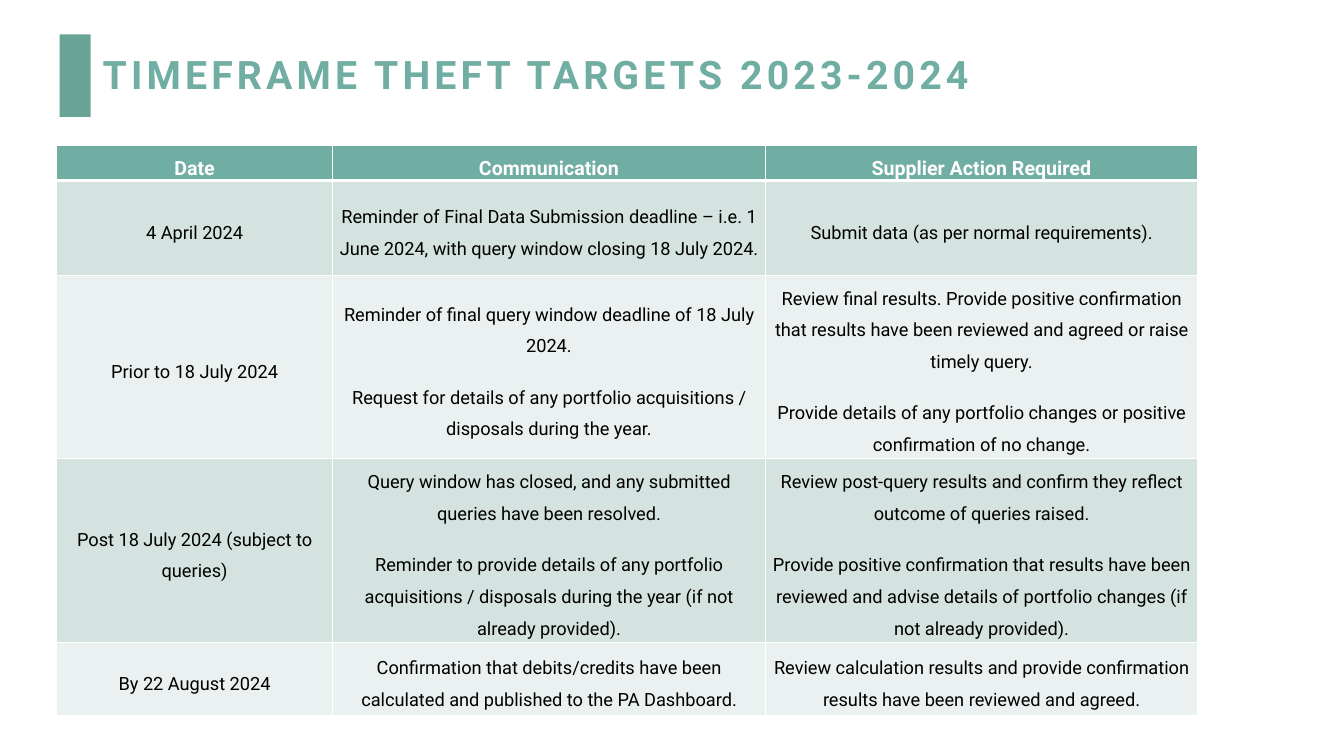
import lxml.etree
import pptx
import pptx.dml.color
import pptx.enum.shapes
import pptx.enum.text
import pptx.oxml.ns
import pptx.util
from pptx.util import Inches

COLORS = {
    "accent": "68A495",
    "teal": "70ADA3",
    "band_dark": "D5E3E0",
    "band_light": "EBF1F0",
    "white": "FFFFFF",
    "black": "000000",
}


def color(name):
    return pptx.dml.color.RGBColor.from_string(COLORS[name])


def write_text(frame, text, *, size, ink, bold=False, align=None,
               line_spacing=1.0, before=0, after=0, tracking=0):
    """Write each line of text as one formatted paragraph."""
    frame.word_wrap = True
    for index, line in enumerate(text.split("\n")):
        paragraph = frame.add_paragraph() if index else frame.paragraphs[0]
        paragraph.alignment = align
        paragraph.line_spacing = line_spacing
        paragraph.space_before = pptx.util.Pt(before if index else 0)
        paragraph.space_after = pptx.util.Pt(after)
        run = paragraph.add_run()
        run.text = line
        run.font.name = "Roboto"
        run.font.size = pptx.util.Pt(size)
        run.font.bold = bold
        run.font.color.rgb = color(ink)
        if tracking:
            run._r.get_or_add_rPr().set("spc", str(tracking * 100))


presentation = pptx.Presentation()
presentation.slide_width = Inches(13.33)
presentation.slide_height = Inches(7.5)
slide = presentation.slides.add_slide(presentation.slide_layouts[6])

# Accent bar and title
bar = slide.shapes.add_shape(pptx.enum.shapes.MSO_SHAPE.RECTANGLE,
                             Inches(0.59), Inches(0.34), Inches(0.31), Inches(0.82))
bar.shadow.inherit = False
bar.fill.solid()
bar.fill.fore_color.rgb = color("accent")
bar.line.fill.background()

title = slide.shapes.add_textbox(Inches(0.92), Inches(0.4), Inches(10.15), Inches(0.72))
title.text_frame.vertical_anchor = pptx.enum.text.MSO_ANCHOR.MIDDLE
write_text(title.text_frame, "TIMEFRAME THEFT TARGETS 2023-2024",
           size=28, ink="teal", bold=True, line_spacing=0.9, tracking=3)

# Timetable content
rows = [
    ("Date", "Communication", "Supplier Action Required"),
    ("4 April 2024",
     "Reminder of Final Data Submission deadline – i.e. 1 June 2024, "
     "with query window closing 18 July 2024.",
     "Submit data (as per normal requirements)."),
    ("Prior to 18 July 2024",
     "Reminder of final query window deadline of 18 July 2024.\n"
     "Request for details of any portfolio acquisitions / disposals during the year.",
     "Review final results. Provide positive confirmation that results have been "
     "reviewed and agreed or raise timely query.\n"
     "Provide details of any portfolio changes or positive confirmation of no change."),
    ("Post 18 July 2024 (subject to queries)",
     "Query window has closed, and any submitted queries have been resolved.\n"
     "Reminder to provide details of any portfolio acquisitions / disposals "
     "during the year (if not already provided).",
     "Review post-query results and confirm they reflect outcome of queries raised.\n"
     "Provide positive confirmation that results have been reviewed and advise "
     "details of portfolio changes (if not already provided)."),
    ("By 22 August 2024",
     "Confirmation that debits/credits have been calculated and published "
     "to the PA Dashboard.",
     "Review calculation results and provide confirmation results have been "
     "reviewed and agreed."),
]
column_widths = [2.74, 4.29, 4.29]
row_heights = [0.34, 0.94, 1.76, 1.76, 0.73]

# Table grid
table = slide.shapes.add_table(len(rows), len(column_widths), Inches(0.56), Inches(1.44),
                               Inches(sum(column_widths)), Inches(sum(row_heights))).table
for column, width in zip(table.columns, column_widths):
    column.width = Inches(width)
for row, height in zip(table.rows, row_heights):
    row.height = Inches(height)

# Cells: header, then alternating bands
for row_index, row_texts in enumerate(rows):
    header = row_index == 0
    band = "teal" if header else ("band_light", "band_dark")[row_index % 2]
    border_widths = {"lnL": 1, "lnR": 1,
                     "lnT": 3 if row_index == 1 else 1,
                     "lnB": 3 if header else 1}
    for column_index, text in enumerate(row_texts):
        cell = table.cell(row_index, column_index)
        cell.margin_left = cell.margin_right = Inches(0.07)
        cell.margin_top = cell.margin_bottom = 0
        cell.vertical_anchor = pptx.enum.text.MSO_ANCHOR.MIDDLE
        write_text(cell.text_frame, text, size=14 if header else 13,
                   ink="white" if header else "black", bold=header,
                   align=pptx.enum.text.PP_ALIGN.CENTER,
                   line_spacing=1.5, before=6, after=8)

        # Borders come ahead of the fill in the cell properties
        properties = cell._tc.get_or_add_tcPr()
        for tag, width in border_widths.items():
            border = lxml.etree.SubElement(properties, pptx.oxml.ns.qn(f"a:{tag}"),
                                           w=str(pptx.util.Pt(width)))
            fill = lxml.etree.SubElement(border, pptx.oxml.ns.qn("a:solidFill"))
            lxml.etree.SubElement(fill, pptx.oxml.ns.qn("a:srgbClr"), val=COLORS["white"])
        cell.fill.solid()
        cell.fill.fore_color.rgb = color(band)

presentation.save("out.pptx")
